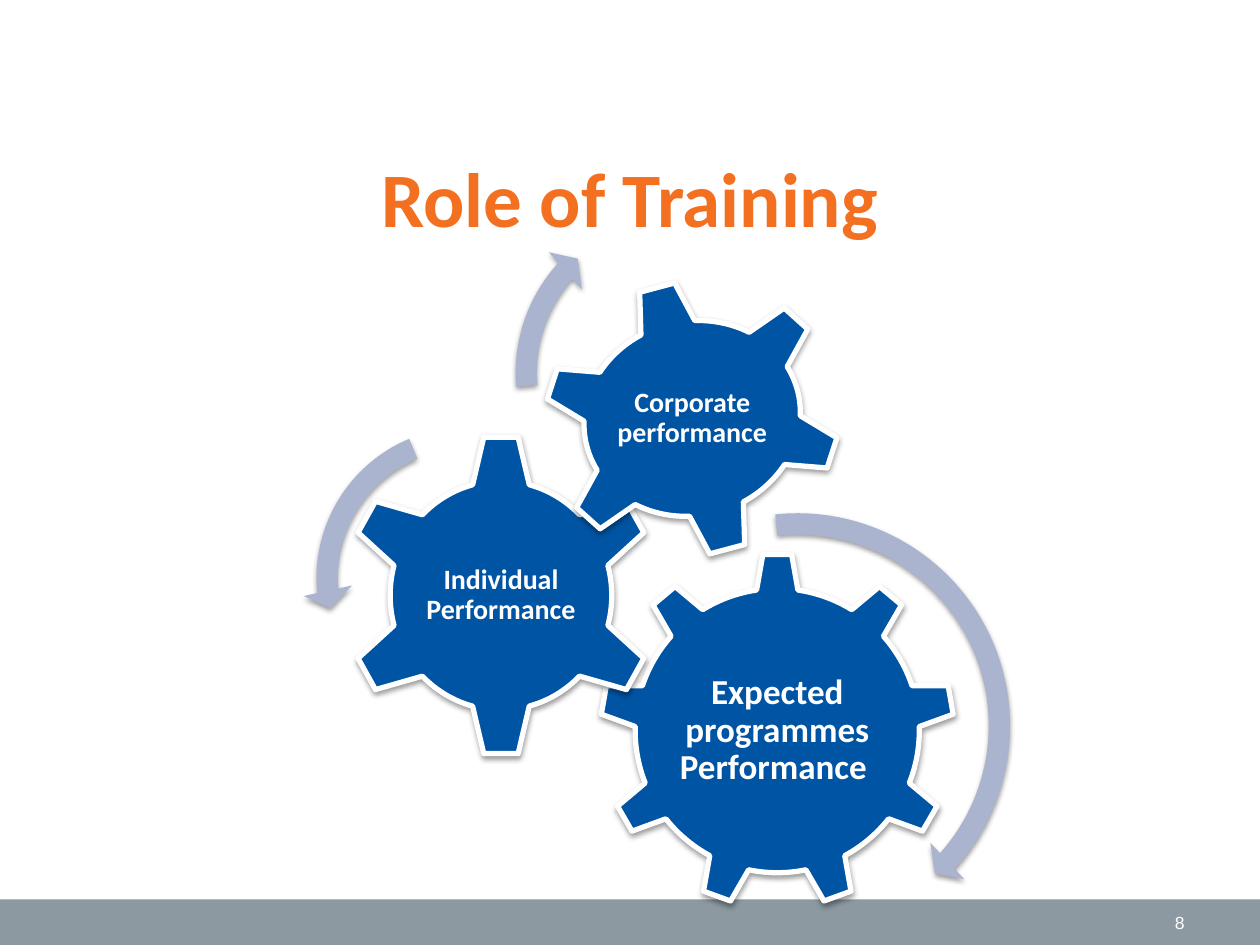
from lxml import etree
from pptx import Presentation
from pptx.dml.color import RGBColor
from pptx.enum import shapes, text
from pptx.oxml import ns
from pptx.util import Cm, Pt

ORANGE = RGBColor(0xF3, 0x70, 0x21)
BLUE = RGBColor(0x00, 0x54, 0xA4)
LILAC = RGBColor(0xAB, 0xB4, 0xCF)
GREY = RGBColor(0x8C, 0x99, 0xA1)
WHITE = RGBColor(0xFF, 0xFF, 0xFF)
BLACK = RGBColor(0, 0, 0)

MST = shapes.MSO_SHAPE
ALIGN = text.PP_ALIGN
ANCHOR = text.MSO_ANCHOR

GEARS = [
    (MST.GEAR_9, (5.99, 7.21, 7.16, 7.16), 0,
     "Expected programmes Performance ", 20, (4.27, 3.68)),
    (MST.GEAR_6, (0.81, 4.8, 6.38, 6.53), 0,
     "Individual Performance", 16, (3.18, 3.25)),
    (MST.GEAR_6, (4.82, 1.7, 6.07, 5.59), 345,
     "Corporate performance", 16, (3.35, 3.2)),
]
ARROWS = [
    (MST.CIRCULAR_ARROW, (5.41, 6.12, 9.14, 9.14),
     (0.047, 2.99, 25.267, 158.388, 0.055)),
    (MST.LEFT_CIRCULAR_ARROW, (0, 4.39, 6.65, 6.65),
     (0.065, 4.3, 104.891, 148.378, 0.075)),
    (MST.CIRCULAR_ARROW, (4.01, 0, 7.16, 7.16),
     (0.06, 3.941, 133.138, 105.082, 0.07)),
]


def add_shadow(sp):
    sp.shadow.inherit = False
    effects = sp._element.spPr.find(ns.qn("a:effectLst"))
    shadow = etree.SubElement(
        effects, ns.qn("a:outerShdw"), blurRad=str(Pt(3.1)),
        dist=str(Pt(1.6)), dir="5400000", rotWithShape="0")
    color = etree.SubElement(shadow, ns.qn("a:srgbClr"), val=str(BLACK))
    etree.SubElement(color, ns.qn("a:alpha"), val="38000")


def add_shape(parent, kind, box, fill):
    sp = parent.add_shape(kind, *map(Cm, box))
    sp.shadow.inherit = False
    sp.fill.solid()
    sp.fill.fore_color.rgb = fill
    sp.line.fill.background()
    return sp


def add_text(parent, box, words, size, color, font="Calibri", bold=True,
             align=ALIGN.CENTER, anchor=ANCHOR.MIDDLE, inset=None, spacing=None):
    tf = parent.add_textbox(*map(Cm, box)).text_frame
    tf.word_wrap = True
    tf.vertical_anchor = anchor
    if inset is not None:
        tf.margin_left = tf.margin_right = Cm(inset)
        tf.margin_top = tf.margin_bottom = Cm(inset)
    p = tf.paragraphs[0]
    p.alignment = align
    if spacing:
        p.line_spacing = spacing
    r = p.add_run()
    r.text = words
    r.font.name = font
    r.font.size = Pt(size)
    r.font.bold = bold
    r.font.color.rgb = color


def add_footer(s, left, top, width, height):
    add_shape(s.shapes, MST.RECTANGLE, (left, top, width, height), GREY)
    number_width = 5.92
    add_text(s.shapes, (left + width - 1.27 - number_width, top, number_width, height),
             "8", 10, WHITE, font="Arial", bold=False, align=ALIGN.RIGHT)


def add_title(s, left, top, width, height):
    add_text(s.shapes, (left, top, width, height), "Role of Training",
             44, ORANGE, anchor=ANCHOR.TOP)


def add_gears(s, left, top):
    group = s.shapes.add_group_shape().shapes
    for kind, (x, y, w, h), turn, words, size, (tw, th) in GEARS:
        x, y = left + x, top + y
        gear = add_shape(group, kind, (x, y, w, h), BLUE)
        gear.rotation = turn
        gear.line.color.rgb = WHITE
        gear.line.width = Pt(3)
        add_shadow(gear)
        add_text(group, (x + (w - tw) / 2, y + (h - th) / 2, tw, th),
                 words, size, WHITE, inset=0.06, spacing=0.9)
    for kind, (x, y, w, h), values in ARROWS:
        arrow = add_shape(group, kind, (left + x, top + y, w, h), LILAC)
        for i, value in enumerate(values):
            arrow.adjustments[i] = value
        add_shadow(arrow)


def main():
    prs = Presentation()
    prs.slide_width, prs.slide_height = Cm(25.4), Cm(19.05)
    s = prs.slides.add_slide(prs.slide_layouts[6])
    add_footer(s, 0, 18.13, 25.4, 0.92)
    add_title(s, 1.27, 2.92, 22.86, 2)
    add_gears(s, 6.1, 3.94)
    prs.save("out.pptx")


if __name__ == "__main__":
    main()
